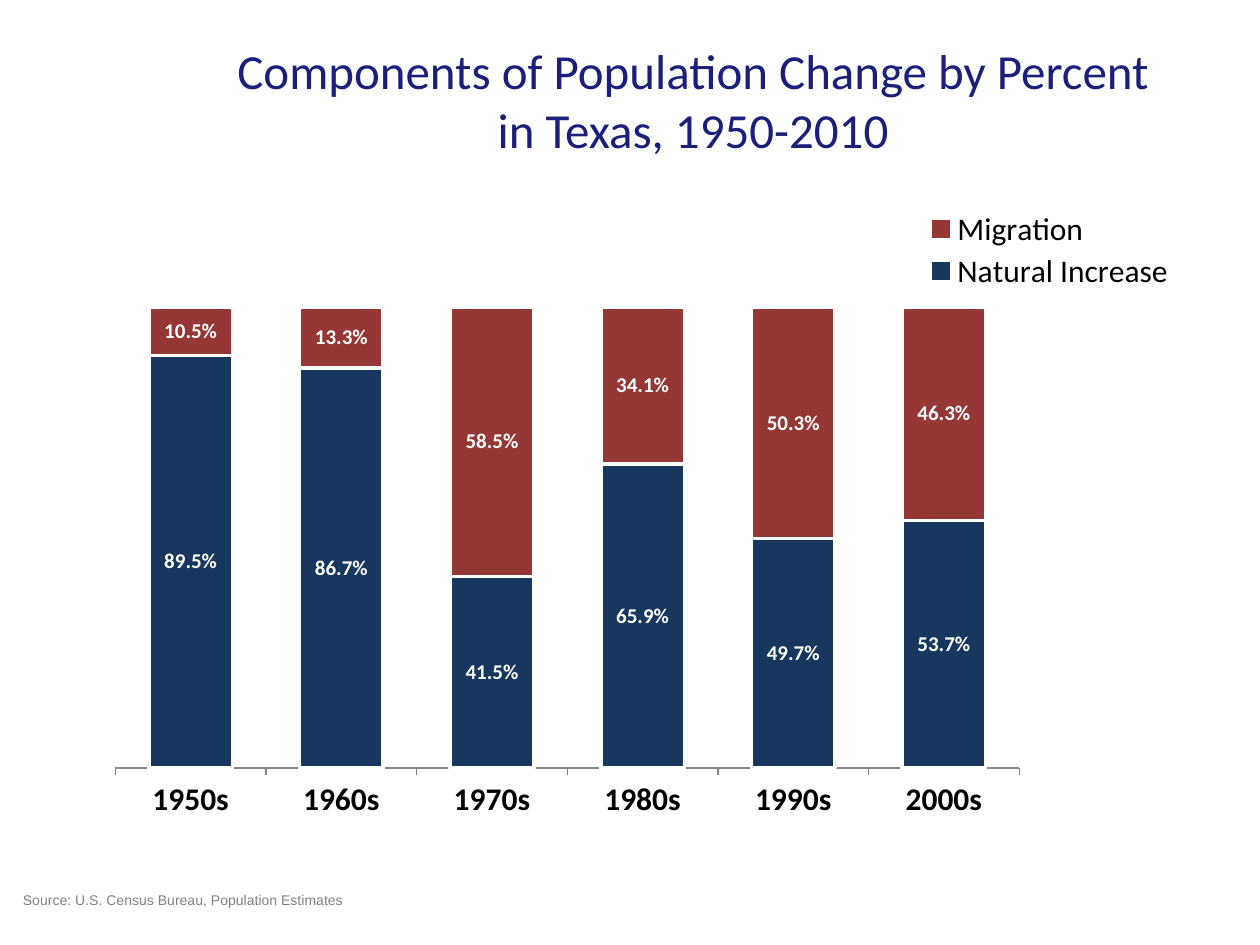
from dataclasses import dataclass

from pptx import Presentation
from pptx import oxml
from pptx.chart import data as chart_data
from pptx.dml import color
from pptx.enum import chart as charts, text
from pptx.oxml import ns
from pptx.util import Pt


@dataclass(frozen=True)
class Theme:
    title: str = "1B1E7A"
    source: str = "808080"
    ink: str = "000000"
    white: str = "FFFFFF"
    axis: str = "868686"
    natural: str = "17375E"
    migration: str = "953735"
    font: str = "Calibri"
    source_font: str = "Arial"
    title_size: int = 28
    chart_size: int = 18
    label_size: int = 12
    source_size: int = 8


THEME = Theme()
DECADES = [f"{year}s" for year in range(1950, 2010, 10)]
NATURAL_INCREASE = [0.895, 0.867, 0.415, 0.659, 0.497, 0.537]
MIGRATION = [0.105, 0.133, 0.585, 0.341, 0.503, 0.463]


def rgb(value):
    return color.RGBColor.from_string(value)


def set_font(font, size, ink, name=THEME.font, bold=False):
    font.name = name
    font.size = Pt(size)
    font.bold = bold
    font.color.rgb = rgb(ink)


def add_text(page, words, *, at, size, ink, name=THEME.font,
             align=text.PP_ALIGN.LEFT, anchor=text.MSO_ANCHOR.TOP):
    box = page.shapes.add_textbox(*map(Pt, at))
    frame = box.text_frame
    frame.word_wrap = True
    frame.vertical_anchor = anchor
    para = frame.paragraphs[0]
    para.alignment = align
    span = para.add_run()
    span.text = words
    set_font(span.font, size, ink, name)


def place(parent, index, x, y, w, h, inner=False):
    for old in parent.findall(ns.qn("c:layout")):
        parent.remove(old)
    target = '<c:layoutTarget val="inner"/>' if inner else ""
    sizes = "".join(f'<c:{key} val="{value}"/>'
                    for key, value in zip("xywh", (x, y, w, h)))
    parent.insert(index, oxml.parse_xml(
        f'<c:layout {ns.nsdecls("c")}><c:manualLayout>{target}'
        f'<c:xMode val="edge"/><c:yMode val="edge"/>{sizes}'
        '</c:manualLayout></c:layout>'))


def style_series(series, fill):
    series.format.fill.solid()
    series.format.fill.fore_color.rgb = rgb(fill)
    series.format.line.color.rgb = rgb(THEME.white)
    series.format.line.width = Pt(2)
    labels = series.data_labels
    labels.show_value = True
    labels.number_format = "0.0%"
    labels.number_format_is_linked = False
    labels.position = charts.XL_LABEL_POSITION.CENTER
    set_font(labels.font, THEME.label_size, THEME.white, bold=True)


def style_axes(chart):
    values = chart.value_axis
    values.visible = False
    values.has_major_gridlines = False
    values.minimum_scale, values.maximum_scale = 0, 1
    values.tick_labels.number_format = "0.0%"
    values.tick_labels.number_format_is_linked = False
    decades = chart.category_axis
    decades.major_tick_mark = charts.XL_TICK_MARK.OUTSIDE
    decades.format.line.color.rgb = rgb(THEME.axis)
    decades.format.line.width = Pt(0.75)
    set_font(decades.tick_labels.font, THEME.chart_size, THEME.ink, bold=True)


def add_legend(chart):
    chart.has_legend = True
    chart.legend.position = charts.XL_LEGEND_POSITION.RIGHT
    chart.legend.include_in_layout = False
    set_font(chart.legend.font, THEME.chart_size, THEME.ink)
    place(chart.element.xpath("c:chart/c:legend")[0], 1, 0.68, 0.01, 0.21, 0.14)


def add_population_chart(page, at):
    table = chart_data.CategoryChartData(number_format="0.0%")
    table.categories = DECADES
    table.add_series("Natural Increase", NATURAL_INCREASE)
    table.add_series("Migration", MIGRATION)
    chart = page.shapes.add_chart(
        charts.XL_CHART_TYPE.COLUMN_STACKED, *map(Pt, at), table).chart
    chart.has_title = False
    set_font(chart.font, THEME.chart_size, THEME.ink)
    plot = chart.plots[0]
    plot.gap_width = 80
    plot.overlap = 100
    plot.vary_by_categories = False
    for series, fill in zip(plot.series, (THEME.natural, THEME.migration)):
        style_series(series, fill)
    style_axes(chart)
    add_legend(chart)
    place(chart.element.xpath("c:chart/c:plotArea")[0], 0,
          0.02, 0.17, 0.74, 0.73, inner=True)


def main():
    deck = Presentation()
    deck.slide_width, deck.slide_height = Pt(720), Pt(540)
    page = deck.slides.add_slide(deck.slide_layouts[6])
    add_population_chart(page, at=(52, 114, 698, 361))
    add_text(page, "Components of Population Change by Percent in Texas, 1950-2010",
             at=(126, 18, 540, 78), size=THEME.title_size, ink=THEME.title,
             align=text.PP_ALIGN.CENTER, anchor=text.MSO_ANCHOR.MIDDLE)
    add_text(page, "Source: U.S. Census Bureau, Population Estimates",
             at=(6, 506, 360, 17), size=THEME.source_size, ink=THEME.source,
             name=THEME.source_font)
    deck.save("out.pptx")


if __name__ == "__main__":
    main()
